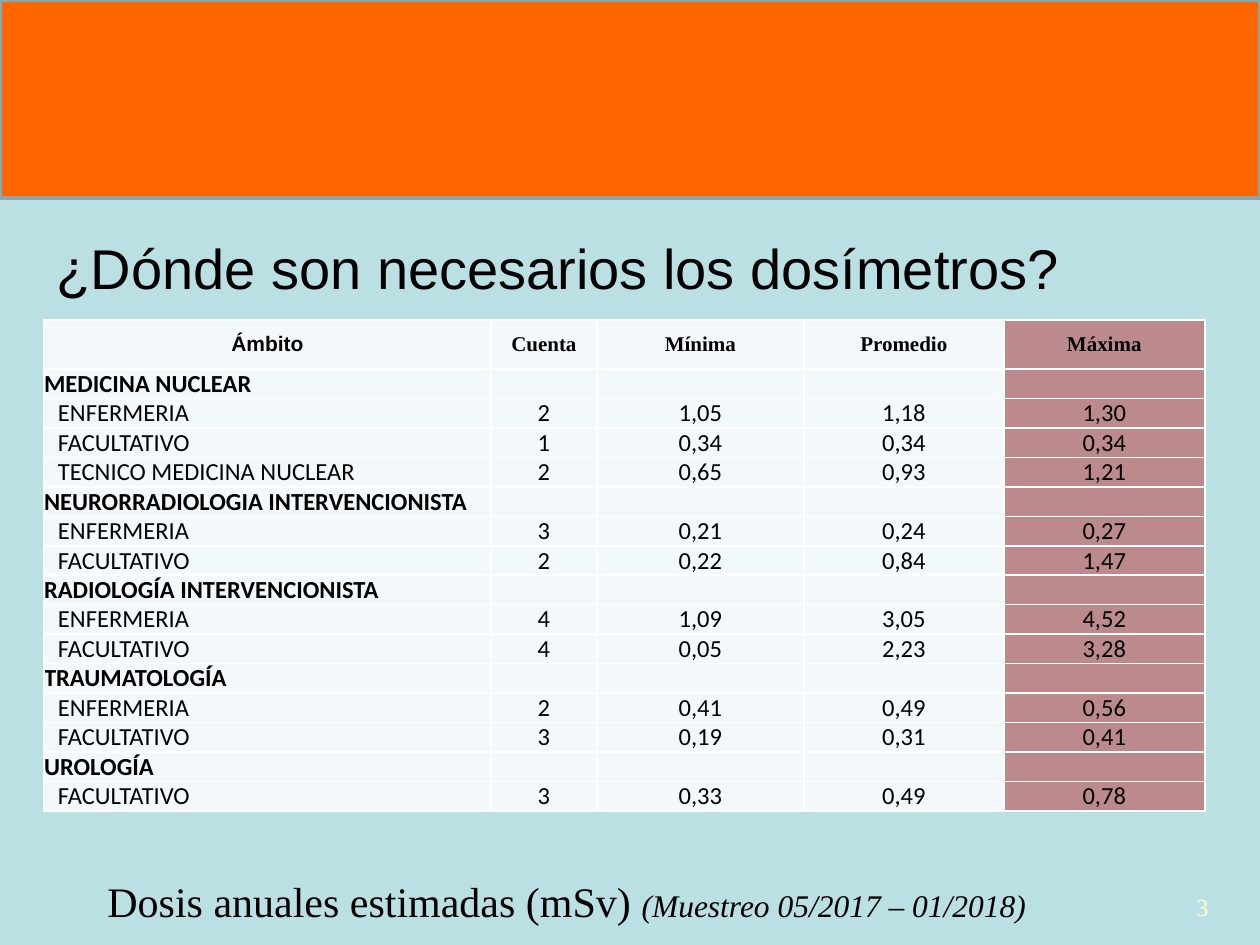
from dataclasses import dataclass
from typing import NamedTuple, Optional

import pptx
import pptx.dml.color
import pptx.enum.shapes
import pptx.enum.text
import pptx.oxml.ns
import pptx.util
from lxml import etree

EMU_PER_PX = 914400 / 126
ALIGN = pptx.enum.text.PP_ALIGN
ANCHOR = pptx.enum.text.MSO_ANCHOR


def px(length: int) -> int:
    return round(length * EMU_PER_PX)


@dataclass(frozen=True)
class Theme:
    background: str = "BBE0E3"
    banner: str = "FF6600"
    banner_line: str = "8AA6A8"
    ink: str = "000000"
    page_number: str = "FFFFCC"
    cell: str = "F3F9FA"
    highlight: str = "C00000"
    highlight_alpha: int = 38
    border: str = "FFFFFF"
    sans: str = "Arial"
    serif: str = "Times New Roman"
    body: str = "Calibri"
    question_pt: int = 32
    caption_pt: int = 24
    note_pt: int = 18
    cell_pt: int = 14
    header_pt: int = 12


THEME = Theme()


class Box(NamedTuple):
    left: int
    top: int
    width: int
    height: int

    def emu(self) -> list[int]:
        return [px(length) for length in self]


class Style(NamedTuple):
    font: str
    size: int
    color: str = THEME.ink
    bold: bool = False
    italic: bool = False


class Dose(NamedTuple):
    role: str
    count: str
    minimum: str
    average: str
    maximum: str


class Area(NamedTuple):
    name: str
    doses: list[Dose]


HEADERS = ["Ámbito", "Cuenta", "Mínima", "Promedio", "Máxima"]
AREAS = [
    Area("MEDICINA NUCLEAR", [
        Dose("ENFERMERIA", "2", "1,05", "1,18", "1,30"),
        Dose("FACULTATIVO", "1", "0,34", "0,34", "0,34"),
        Dose("TECNICO MEDICINA NUCLEAR", "2", "0,65", "0,93", "1,21")]),
    Area("NEURORRADIOLOGIA INTERVENCIONISTA", [
        Dose("ENFERMERIA", "3", "0,21", "0,24", "0,27"),
        Dose("FACULTATIVO", "2", "0,22", "0,84", "1,47")]),
    Area("RADIOLOGÍA INTERVENCIONISTA", [
        Dose("ENFERMERIA", "4", "1,09", "3,05", "4,52"),
        Dose("FACULTATIVO", "4", "0,05", "2,23", "3,28")]),
    Area("TRAUMATOLOGÍA", [
        Dose("ENFERMERIA", "2", "0,41", "0,49", "0,56"),
        Dose("FACULTATIVO", "3", "0,19", "0,31", "0,41")]),
    Area("UROLOGÍA", [
        Dose("FACULTATIVO", "3", "0,33", "0,49", "0,78")]),
]
COLUMN_WIDTHS = [447, 106, 207, 200, 201]
HEADER_HEIGHT = 49
TABLE_BOX = Box(44, 320, sum(COLUMN_WIDTHS), 491)
ROLE_INDENT = 14


def rgb(color: str) -> pptx.dml.color.RGBColor:
    return pptx.dml.color.RGBColor.from_string(color)


def add_run(paragraph, text: str, style: Style) -> None:
    run = paragraph.add_run()
    run.text = text
    run.font.name = style.font
    run.font.size = pptx.util.Pt(style.size)
    run.font.bold = style.bold
    run.font.italic = style.italic
    run.font.color.rgb = rgb(style.color)


def add_text(slide, box: Box, runs: list[tuple[str, Style]], align=ALIGN.LEFT) -> None:
    frame = slide.shapes.add_textbox(*box.emu()).text_frame
    frame.word_wrap = True
    frame.paragraphs[0].alignment = align
    for text, style in runs:
        add_run(frame.paragraphs[0], text, style)


def add_banner(slide) -> None:
    banner = slide.shapes.add_shape(
        pptx.enum.shapes.MSO_SHAPE.RECTANGLE, *Box(0, 0, 1260, 198).emu())
    banner.shadow.inherit = False
    banner.fill.solid()
    banner.fill.fore_color.rgb = rgb(THEME.banner)
    banner.line.color.rgb = rgb(THEME.banner_line)
    banner.line.width = pptx.util.Pt(2)


def fill_question(placeholder) -> None:
    placeholder.left, placeholder.top, placeholder.width, placeholder.height = Box(
        44, 227, 1160, 622).emu()
    placeholder.text_frame.auto_size = pptx.enum.text.MSO_AUTO_SIZE.NONE
    question = placeholder.text_frame.paragraphs[0]
    properties = question._p.get_or_add_pPr()
    properties.set("marL", str(px(84)))
    properties.set("indent", str(-px(84)))
    etree.SubElement(properties, pptx.oxml.ns.qn("a:buNone"))
    question.space_before = pptx.util.Pt(0)
    add_run(question, "¿Dónde son necesarios los dosímetros?",
            Style(THEME.sans, THEME.question_pt))


def paint_cell(cell, highlighted: bool) -> None:
    qn = pptx.oxml.ns.qn
    properties = cell._tc.get_or_add_tcPr()
    for side in ("lnL", "lnR", "lnT", "lnB"):
        line = etree.SubElement(properties, qn(f"a:{side}"), w=str(pptx.util.Pt(1)))
        solid = etree.SubElement(line, qn("a:solidFill"))
        etree.SubElement(solid, qn("a:srgbClr"), val=THEME.border)
    cell.fill.solid()
    cell.fill.fore_color.rgb = rgb(THEME.highlight if highlighted else THEME.cell)
    if highlighted:
        color = properties.find(f"{qn('a:solidFill')}/{qn('a:srgbClr')}")
        etree.SubElement(color, qn("a:alpha"), val=str(THEME.highlight_alpha * 1000))


def fill_cell(cell, text: str, style: Style, align, anchor,
              highlighted: bool, indent: int = 0) -> None:
    cell.margin_left = px(indent)
    cell.margin_right = cell.margin_top = cell.margin_bottom = 0
    cell.vertical_anchor = anchor
    paint_cell(cell, highlighted)
    paragraph = cell.text_frame.paragraphs[0]
    paragraph.alignment = align
    if text:
        add_run(paragraph, text, style)
    else:
        # Keep empty cells from stretching their row
        etree.SubElement(paragraph._p, pptx.oxml.ns.qn("a:endParaRPr"),
                         sz=str(style.size * 100))


def add_dose_table(slide) -> None:
    body_rows = []
    for area in AREAS:
        body_rows.append((Dose(area.name, "", "", "", ""), True))
        body_rows += [(dose, False) for dose in area.doses]

    table = slide.shapes.add_table(
        len(body_rows) + 1, len(HEADERS), *TABLE_BOX.emu()).table
    table.first_row = table.horz_banding = False
    for column, width in zip(table.columns, COLUMN_WIDTHS):
        column.width = px(width)
    for row in table.rows:
        row.height = px(TABLE_BOX.height - HEADER_HEIGHT) // len(body_rows)
    table.rows[0].height = px(HEADER_HEIGHT)

    last = len(HEADERS) - 1
    for c, header in enumerate(HEADERS):
        style = Style(THEME.serif if c else THEME.sans, THEME.header_pt, bold=True)
        fill_cell(table.cell(0, c), header, style, ALIGN.CENTER, ANCHOR.MIDDLE, c == last)
    for r, (dose, is_area) in enumerate(body_rows, start=1):
        style = Style(THEME.body, THEME.cell_pt, bold=is_area)
        for c, text in enumerate(dose):
            fill_cell(table.cell(r, c), text, style, ALIGN.CENTER if c else ALIGN.LEFT,
                      ANCHOR.BOTTOM, c == last, 0 if c or is_area else ROLE_INDENT)


def main() -> None:
    deck = pptx.Presentation()
    deck.slide_width, deck.slide_height = px(1260), px(945)
    slide = deck.slides.add_slide(deck.slide_layouts[1])
    slide.background.fill.solid()
    slide.background.fill.fore_color.rgb = rgb(THEME.background)

    # The question stands in the body; the banner carries no title
    unused_title = slide.shapes.title.element
    unused_title.getparent().remove(unused_title)
    question = slide.placeholders[1]

    # Banner and page number, behind the content
    add_banner(slide)
    add_text(slide, Box(1137, 886, 84, 63),
             [("3", Style(THEME.serif, THEME.cell_pt, THEME.page_number))], ALIGN.RIGHT)

    # Question, caption and doses
    fill_question(question)
    add_text(slide, Box(95, 869, 1137, 63), [
        ("Dosis anuales estimadas (mSv) ", Style(THEME.serif, THEME.caption_pt)),
        ("(Muestreo 05/2017 – 01/2018)", Style(THEME.serif, THEME.note_pt, italic=True)),
    ])
    add_dose_table(slide)
    deck.save("out.pptx")


if __name__ == "__main__":
    main()
